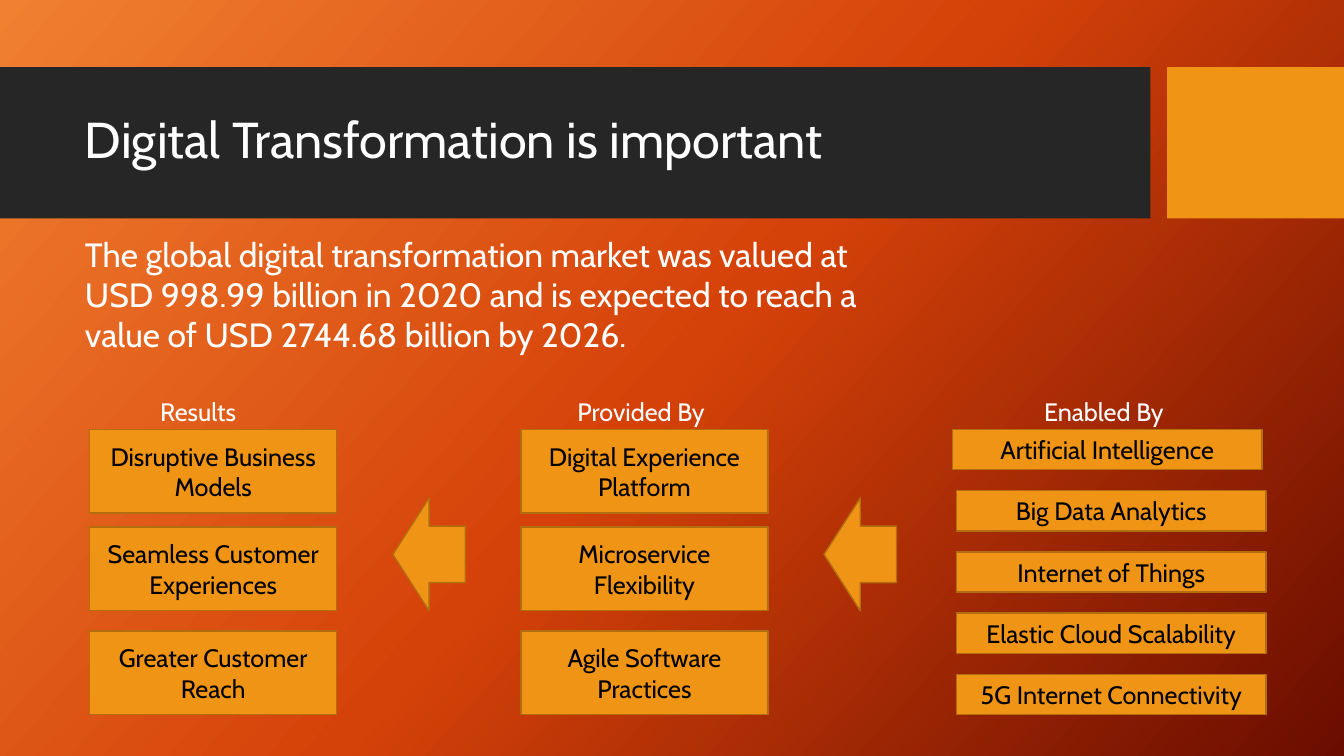
from copy import deepcopy
from dataclasses import dataclass
from pptx import Presentation
from pptx.dml.color import RGBColor as RGB
from pptx.enum.shapes import MSO_SHAPE as Kind
from pptx.enum.text import MSO_ANCHOR as Anchor, PP_ALIGN as Align
from pptx.oxml.ns import qn
from pptx.util import Pt

TITLE = "Digital Transformation is important"
BODY = ("The global digital transformation market was valued at "
        "USD 998.99 billion in 2020 and is expected to reach a "
        "value of USD 2744.68 billion by 2026.")
GROUPS = [
    ["Disruptive Business Models", "Seamless Customer Experiences",
     "Greater Customer Reach"],
    ["Digital Experience Platform", "Microservice Flexibility",
     "Agile Software Practices"],
]
TOOLS = ["Artificial Intelligence", "Big Data Analytics", "Internet of Things",
         "Elastic Cloud Scalability", "5G Internet Connectivity"]
HEADS = [("Results", 107.3, 71.3), ("Provided By", 405.4, 109.4),
         ("Enabled By", 738.7, 103.7)]


@dataclass(frozen=True)
class Theme:
    font: str = "Cabin"
    band: str = "262626"
    gold: str = "F09415"
    edge: str = "B26D10"
    light: str = "FFFFFF"
    dark: str = "000000"
    back: tuple = ((0, "F18031"), (0.5, "D54209"), (1, "6A0D00"))
    angle: int = 42
    title: int = 36
    body: int = 24
    label: int = 18


T = Theme()
LEFT, STEP, TOP = 64.1, 308, 306.7
ROWS = [TOP, 376.5, 450.7]
PITCH = 43.75

deck = Presentation()
deck.slide_width, deck.slide_height = Pt(960), Pt(540)
slide = deck.slides.add_slide(deck.slide_layouts[6])


def paint():
    fill = slide.background.fill
    fill.gradient()
    fill.gradient_angle = 360 - T.angle
    stops = slide.element.find(".//" + qn("a:gsLst"))
    stops.insert(1, deepcopy(stops[0]))
    for stop, (pos, color) in zip(fill.gradient_stops, T.back):
        stop.position = pos
        stop.color.rgb = RGB.from_string(color)


def write(shape, text, size, color, align=Align.LEFT, anchor=Anchor.TOP, wrap=True):
    frame = shape.text_frame
    frame.text = text
    frame.word_wrap = wrap
    frame.vertical_anchor = anchor
    line = frame.paragraphs[0]
    line.alignment = align
    font = line.runs[0].font
    font.name, font.size = T.font, Pt(size)
    font.color.rgb = RGB.from_string(color)
    return line


def shape(kind, box, fill, edge=None):
    item = slide.shapes.add_shape(kind, *map(Pt, box))
    item.shadow.inherit = False
    item.fill.solid()
    item.fill.fore_color.rgb = RGB.from_string(fill)
    if edge:
        item.line.color.rgb = RGB.from_string(edge)
        item.line.width = Pt(1)
    else:
        item.line.fill.background()
    return item


def card(text, box):
    item = shape(Kind.RECTANGLE, box, T.gold, T.edge)
    write(item, text, T.label, T.dark, Align.CENTER, Anchor.MIDDLE)


def note(text, box, size, **style):
    item = slide.shapes.add_textbox(*map(Pt, box))
    return write(item, text, size, T.light, **style)


paint()
shape(Kind.RECTANGLE, (0, 48, 821.8, 108), T.band)
shape(Kind.RECTANGLE, (833.6, 48, 126.4, 108), T.gold)
note(TITLE, (53.6, 59, 756.7, 85), T.title, anchor=Anchor.MIDDLE).line_spacing = 0.9
note(BODY, (53.6, 163.4, 586.8, 111.6), T.body)

for col, names in enumerate(GROUPS):
    x = LEFT + col * STEP
    for name, y in zip(names, ROWS):
        card(name, (x, y, 176.4, 59.8))
    shape(Kind.LEFT_ARROW, (x + 216.5, 355.7, 51.8, 80.6), T.gold, T.edge)

for row, name in enumerate(TOOLS):
    x = 683.3 if row else 680.4
    card(name, (x, TOP + row * PITCH, 221, 28.8))

for head, x, wide in HEADS:
    note(head, (x, 279.4, wide, 28.8), T.label, wrap=False)

deck.save("out.pptx")
